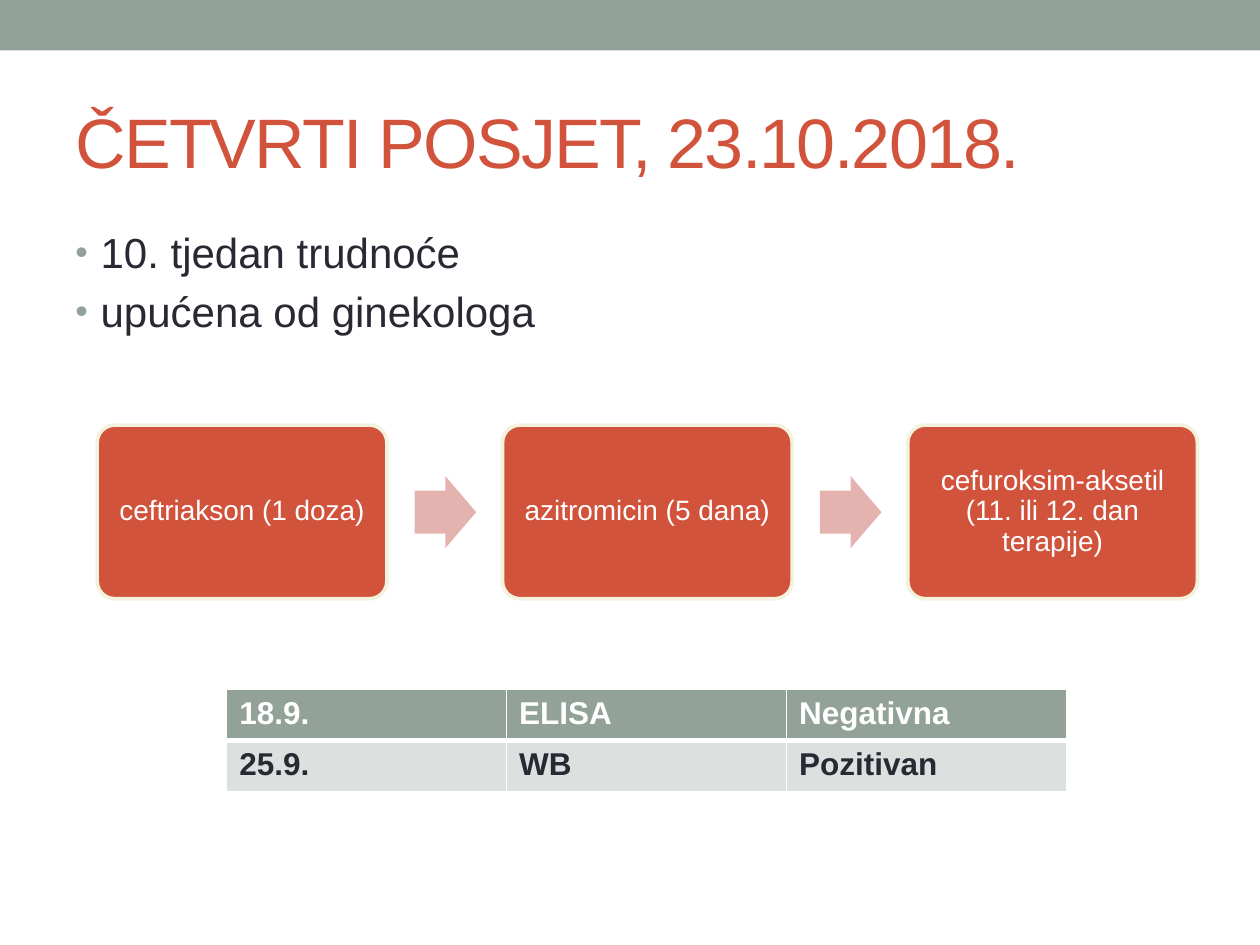
from lxml.etree import SubElement
from pptx import Presentation
from pptx.dml.color import RGBColor
from pptx.enum.shapes import MSO_SHAPE as Shape
from pptx.enum.text import MSO_ANCHOR as Anchor, PP_ALIGN as Align
from pptx.oxml.ns import qn
from pptx.util import Cm, Pt

COLORS = {
    "sage": "93A299",
    "red": "D2533C",
    "ink": "292934",
    "cream": "F3F2DC",
    "pink": "E5B3AF",
    "pale": "DCE0DE",
    "white": "FFFFFF",
}


def rgb(name):
    return RGBColor.from_string(COLORS[name])


class SlideBuilder:
    font_name = "Arial"

    def __init__(self, slide):
        self.slide = slide

    def style(self, para, size, color, bold=False):
        para.font.name = self.font_name
        para.font.size = Pt(size)
        para.font.bold = bold
        para.font.color.rgb = rgb(color)

    def shape(self, kind, left, top, width, height, fill, adjustments=()):
        shape = self.slide.shapes.add_shape(
            kind, Cm(left), Cm(top), Cm(width), Cm(height))
        shape.shadow.inherit = False
        shape.fill.solid()
        shape.fill.fore_color.rgb = rgb(fill)
        shape.line.fill.background()
        for index, value in enumerate(adjustments):
            shape.adjustments[index] = value
        return shape

    def step(self, text, left, top, width, height):
        box = self.shape(Shape.ROUNDED_RECTANGLE, left, top, width, height,
                         "red", [0.1])
        box.line.color.rgb = rgb("cream")
        box.line.width = Pt(2.08)
        frame = box.text_frame
        frame.word_wrap = True
        frame.vertical_anchor = Anchor.MIDDLE
        frame.margin_left = frame.margin_right = Cm(0.18)
        frame.margin_top = frame.margin_bottom = Cm(0.18)
        para = frame.paragraphs[0]
        para.text = text
        para.alignment = Align.CENTER
        para.line_spacing = 0.9
        self.style(para, 16, "white")

    def text_box(self, left, top, width, height, anchor):
        box = self.slide.shapes.add_textbox(
            Cm(left), Cm(top), Cm(width), Cm(height))
        box.text_frame.word_wrap = True
        box.text_frame.vertical_anchor = anchor
        return box.text_frame

    def title(self, text, *place):
        para = self.text_box(*place, Anchor.MIDDLE).paragraphs[0]
        span = para.add_run()
        span.text = text
        self.style(para, 40, "red")
        span.font._element.set("spc", "-100")

    def bullets(self, lines, *place):
        frame = self.text_box(*place, Anchor.TOP)
        for index, line in enumerate(lines):
            para = frame.add_paragraph() if index else frame.paragraphs[0]
            para.text = line
            para.space_before = Pt(4.8)
            self.style(para, 24, "ink")
            props = para._p.get_or_add_pPr()
            props.set("marL", str(Cm(0.51)))
            props.set("indent", str(-Cm(0.51)))
            bullet_color = SubElement(props, qn("a:buClr"))
            SubElement(bullet_color, qn("a:srgbClr"), val=COLORS["sage"])
            SubElement(props, qn("a:buSzPct"), val="85000")
            SubElement(props, qn("a:buFont"), typeface=self.font_name)
            SubElement(props, qn("a:buChar"), char="•")
            # Default run properties come after the bullet in the schema
            props.append(props.find(qn("a:defRPr")))

    def border(self, cell, side, width):
        line = SubElement(cell._tc.get_or_add_tcPr(), qn(f"a:ln{side}"),
                          w=str(Pt(width)))
        fill = SubElement(line, qn("a:solidFill"))
        SubElement(fill, qn("a:srgbClr"), val=COLORS["white"])

    def table(self, rows, row_styles, left, top, width, height):
        table = self.slide.shapes.add_table(
            len(rows), len(rows[0]),
            Cm(left), Cm(top), Cm(width), Cm(height)).table
        for r, (values, (fill, color)) in enumerate(zip(rows, row_styles)):
            for c, value in enumerate(values):
                cell = table.cell(r, c)
                # The rule between header and body is thicker
                for side in "LRTB":
                    thick = (r, side) in ((0, "B"), (1, "T"))
                    self.border(cell, side, 3 if thick else 1)
                cell.fill.solid()
                cell.fill.fore_color.rgb = rgb(fill)
                para = cell.text_frame.paragraphs[0]
                para.text = value
                self.style(para, 18, color, bold=True)


def main():
    deck = Presentation()
    deck.slide_width, deck.slide_height = Cm(25.4), Cm(19.05)
    builder = SlideBuilder(deck.slides.add_slide(deck.slide_layouts[6]))

    # Top band, title and bullets
    builder.shape(Shape.RECTANGLE, 0, 0, 25.4, 1.02, "sage")
    builder.title("ČETVRTI POSJET, 23.10.2018.", 1.27, 1.47, 22.86, 2.74)
    builder.bullets(["10. tjedan trudnoće", "upućena od ginekologa"],
                    1.27, 4.45, 22.86, 3.5)

    # Therapy steps with an arrow between neighbours
    steps = ["ceftriakson (1 doza)", "azitromicin (5 dana)",
             "cefuroksim-aksetil (11. ili 12. dan terapije)"]
    first_left, pitch = 1.96, 8.17
    for index, text in enumerate(steps):
        left = first_left + index * pitch
        if index:
            builder.shape(Shape.RIGHT_ARROW, left - 1.77, 9.6, 1.24, 1.45,
                          "pink", [0.6, 0.5])
        builder.step(text, left, 8.57, 5.84, 3.5)

    # Test results
    builder.table([["18.9.", "ELISA", "Negativna"],
                   ["25.9.", "WB", "Pozitivan"]],
                  [("sage", "white"), ("pale", "ink")],
                  4.57, 13.9, 16.93, 2.06)

    deck.save("out.pptx")


if __name__ == "__main__":
    main()
